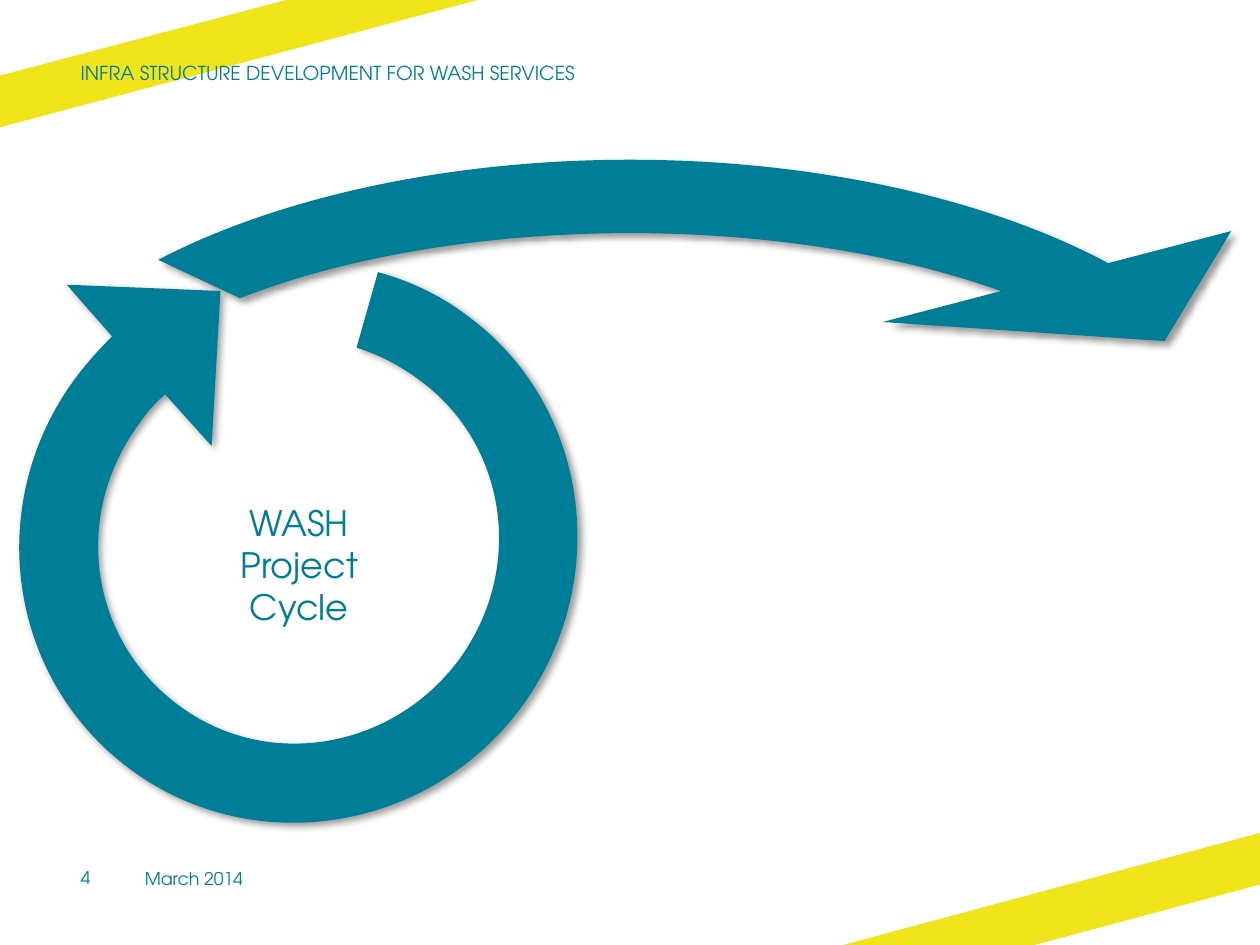
"""Build the WASH project cycle slide with its two curved arrows."""
from lxml import etree
from pptx import Presentation
from pptx.dml.color import RGBColor
from pptx.enum import shapes, text
from pptx.oxml import ns
from pptx.util import Inches, Pt

TEAL = RGBColor(0x00, 0x7E, 0x97)
YELLOW = RGBColor(0xF0, 0xE5, 0x1B)
FONT = "TeX Gyre Adventor"

BANDS = [
    [(2.27, 0), (0, 0.6), (0, 1.01), (3.79, 0)],
    [(6.69, 7.5), (8.21, 7.5), (10, 7.02), (10, 6.61)],
]
SWEEP_BOX = (-1.3, 0.13, 12.6, 7.37)
SWEEP_ADJUSTMENTS = (0.079, 6.554, 200.671, 123.047, 0.194)
RING_BOX = (0.16, 2.16, 4.42, 4.37)
RING_INNER = [
    [(1.31, 3.13)],
    [(1.23, 3.2), (1.16, 3.28), (1.1, 3.37)],
    [(0.57, 4.09), (0.71, 5.08), (1.42, 5.6)],
    [(2.12, 6.12), (3.11, 5.95), (3.64, 5.24)],
    [(4.17, 4.52), (4.03, 3.52), (3.32, 3.01)],
    [(3.17, 2.9), (3, 2.81), (2.83, 2.76)],
]
RING_OUTER = [
    [(3, 2.16)],
    [(3.25, 2.23), (3.49, 2.34), (3.7, 2.5)],
    [(4.68, 3.21), (4.87, 4.61), (4.14, 5.61)],
    [(3.41, 6.6), (2.02, 6.83), (1.04, 6.11)],
    [(0.06, 5.39), (-0.14, 4), (0.6, 3)],
    [(0.69, 2.88), (0.79, 2.77), (0.89, 2.67)],
]
RING_HEAD = [[(0.53, 2.26)], [(1.75, 2.31)], [(1.68, 3.54)]]
TITLE = ("INFRA STRUCTURE DEVELOPMENT FOR WASH SERVICES", (0.64, 0.43, 4.57, 0.29), 11)
CYCLE = ("WASH Project Cycle", (1.43, 3.93, 1.89, 1.02), 20)
FOOTERS = [
    ("4", (0.64, 6.88, 0.44, 0.24), 10),
    ("March 2014", (1.15, 6.89, 2.2, 0.24), 10),
]


def paint(sp, color):
    sp.shadow.inherit = False
    sp.fill.solid()
    sp.fill.fore_color.rgb = color
    sp.line.fill.background()


def add_polygon(s, points, color):
    points = [(Inches(x), Inches(y)) for x, y in points]
    builder = s.shapes.build_freeform(*points[0], scale=1.0)
    builder.add_line_segments(points[1:], close=True)
    sp = builder.convert_to_shape()
    paint(sp, color)
    return sp


def add_curved(s, box, segments, color):
    left, top, width, height = box
    right, bottom = left + width, top + height
    corners = [(left, top), (right, top), (right, bottom), (left, bottom)]
    sp = add_polygon(s, corners, color)
    outline = sp._element.spPr.find(".//" + ns.qn("a:path"))
    for child in list(outline):
        outline.remove(child)
    for i, points in enumerate(segments):
        tag = "a:moveTo" if i == 0 else "a:cubicBezTo" if len(points) == 3 else "a:lnTo"
        command = etree.SubElement(outline, ns.qn(tag))
        for x, y in points:
            etree.SubElement(command, ns.qn("a:pt"),
                             x=str(Inches(x - left)), y=str(Inches(y - top)))
    etree.SubElement(outline, ns.qn("a:close"))
    return sp


def add_shadow(sp, angle):
    effects = sp._element.spPr.find(ns.qn("a:effectLst"))
    shadow = etree.SubElement(
        effects, ns.qn("a:outerShdw"), blurRad=str(Pt(4)), dist=str(Pt(3)),
        dir=str(angle * 60000), algn="ctr", rotWithShape="0")
    color = etree.SubElement(shadow, ns.qn("a:srgbClr"), val="000000")
    etree.SubElement(color, ns.qn("a:alpha"), val="40000")


def add_label(s, label, box, size, margin=0.0, align=text.PP_ALIGN.LEFT,
              anchor=text.MSO_ANCHOR.TOP):
    tf = s.shapes.add_textbox(*map(Inches, box)).text_frame
    tf.word_wrap = True
    tf.vertical_anchor = anchor
    tf.margin_left = tf.margin_right = Inches(margin)
    tf.margin_top = tf.margin_bottom = Inches(margin / 2)
    p = tf.paragraphs[0]
    p.text = label
    p.alignment = align
    p.font.name = FONT
    p.font.size = Pt(size)
    p.font.color.rgb = TEAL


def main():
    prs = Presentation()
    prs.slide_width, prs.slide_height = Inches(10), Inches(7.5)
    s = prs.slides.add_slide(prs.slide_layouts[6])

    for band in BANDS:
        add_polygon(s, band, YELLOW)

    sweep = s.shapes.add_shape(shapes.MSO_SHAPE.CIRCULAR_ARROW, *map(Inches, SWEEP_BOX))
    for i, value in enumerate(SWEEP_ADJUSTMENTS):
        sweep.adjustments[i] = value
    paint(sweep, TEAL)
    add_shadow(sweep, 45)

    ring = add_curved(s, RING_BOX, RING_INNER + RING_OUTER + RING_HEAD, TEAL)
    add_shadow(ring, 45)

    add_label(s, *TITLE, anchor=text.MSO_ANCHOR.MIDDLE)
    add_label(s, *CYCLE, margin=0.1, align=text.PP_ALIGN.CENTER)
    for footer in FOOTERS:
        add_label(s, *footer)
    prs.save("out.pptx")


if __name__ == "__main__":
    main()
